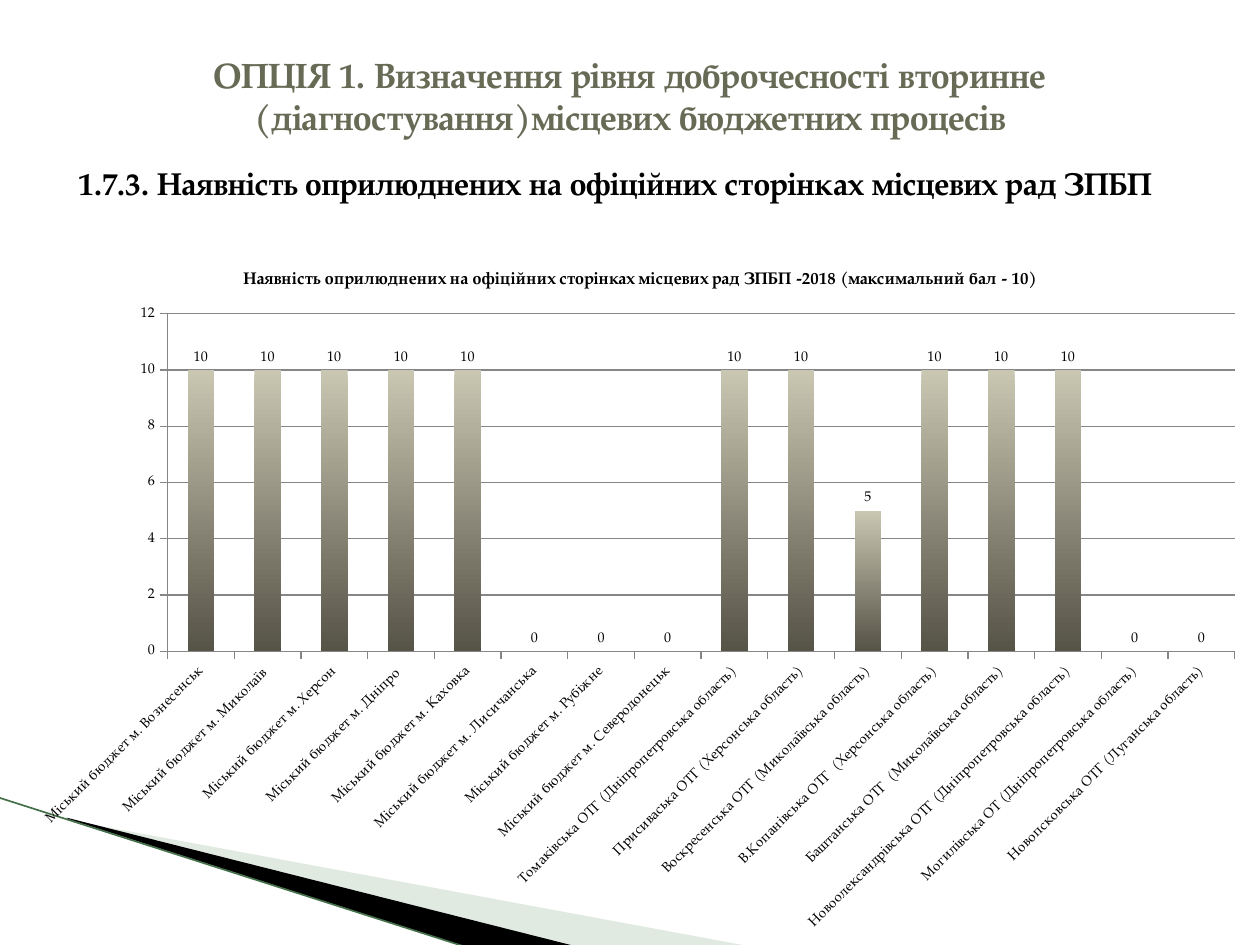
from lxml.etree import SubElement
from pptx import Presentation
from pptx.chart.data import CategoryChartData
from pptx.dml.color import RGBColor
from pptx.enum.chart import XL_CHART_TYPE, XL_LABEL_POSITION, XL_TICK_MARK
from pptx.enum.shapes import MSO_CONNECTOR
from pptx.enum.text import MSO_ANCHOR, PP_ALIGN
from pptx.oxml import parse_xml
from pptx.oxml.ns import nsdecls, qn
from pptx.util import Inches, Pt

FONT = "TeX Gyre Pagella"
BLACK = RGBColor(0, 0, 0)
OLIVE = RGBColor(0x67, 0x6A, 0x55)
PALE_GREEN = RGBColor(0xB3, 0xCB, 0xB5)
DARK_GREEN = RGBColor(0x44, 0x70, 0x4A)
GRID_GREY = RGBColor(0x86, 0x86, 0x86)
BAR_TOP = RGBColor(0xC9, 0xC6, 0xB2)
BAR_BOTTOM = RGBColor(0x56, 0x53, 0x47)

TEXTS = [
    ("ОПЦІЯ 1. Визначення рівня доброчесності вторинне (діагностування)місцевих бюджетних процесів",
     (0.5, 0.3, 9, 1.25), 20, OLIVE, 0.38),
    ("1.7.3. Наявність оприлюднених на офіційних сторінках місцевих рад ЗПБП",
     (0, 1.25, 9.77, 0.4), 18, BLACK, 0.05),
]
WEDGES = [
    ((0.78, 5.47, 4.16, 1.58),
     [(0.55, 6.51), (5.95, 7.51), (4.56, 7.51), (0.55, 6.5)], PALE_GREEN, 40),
    ((-0.06, 6.33, 4.16, 0.92),
     [(0.53, 6.49), (4.57, 7.51), (3.72, 7.52), (0.54, 6.5)], BLACK, 100),
]
EDGE = (-0.01, 6.33, 3.71, 7.52)

CHART_TITLE = "Наявність оприлюднених на офіційних сторінках місцевих рад ЗПБП -2018 (максимальний бал - 10)"
CHART_BOX = (0.16, 1.96, 9.84, 5.54)
PLOT_BOX = (1.17, 0.53, 8.47, 2.68)
SCORES = [
    ("Міський бюджет м. Вознесенськ", 10),
    ("Міський бюджет м. Миколаїв ", 10),
    ("Міський бюджет м. Херсон", 10),
    ("Міський бюджет м. Дніпро ", 10),
    ("Міський бюджет м. Каховка", 10),
    ("Міський бюджет м. Лисичанська", 0),
    ("Міський бюджет м. Рубіжне", 0),
    ("Міський бюджет м. Северодонецьк", 0),
    ("Томаківська ОТГ (Дніпропетровська область)", 10),
    (" Присиваська ОТГ (Херсонська область)", 10),
    (" Воскресенська ОТГ (Миколаївська область)", 5),
    ("В.Копанівська ОТГ  (Херсонська область)", 10),
    ("Баштанська ОТГ  (Миколаївська область)", 10),
    ("Новоолександрівська ОТГ (Дніпропетровська область)", 10),
    ("Могилівська ОТ (Дніпропетровська область)", 0),
    ("Новопсковська ОТГ (Луганська область)", 0),
]


def inches(values):
    return [Inches(value) for value in values]


def set_font(font, size, color, bold):
    for name, value in {"name": FONT, "size": Pt(size), "bold": bold}.items():
        setattr(font, name, value)
    font.color.rgb = color


def set_frame(shape, frame):
    left, top, width, height = inches(frame)
    shift_x, shift_y = shape.left - left, shape.top - top
    outline = next(shape._element.iter(qn("a:path")))
    outline.set("w", str(width))
    outline.set("h", str(height))
    for point in outline.iter(qn("a:pt")):
        point.set("x", str(int(point.get("x")) + shift_x))
        point.set("y", str(int(point.get("y")) + shift_y))
    shape.left, shape.top, shape.width, shape.height = left, top, width, height


def add_wedge(slide, frame, points, color, opacity):
    builder = slide.shapes.build_freeform(*inches(points[0]), scale=1.0)
    builder.add_line_segments([inches(point) for point in points[1:]], close=True)
    shape = builder.convert_to_shape()
    set_frame(shape, frame)
    shape.shadow.inherit = False
    shape.fill.solid()
    shape.fill.fore_color.rgb = color
    shape.line.fill.background()
    if opacity < 100:
        fill_color = shape.fill._xPr.find(qn("a:solidFill"))[0]
        SubElement(fill_color, qn("a:alpha")).set("val", str(opacity * 1000))


def add_edge(slide):
    edge = slide.shapes.add_connector(MSO_CONNECTOR.STRAIGHT, *inches(EDGE))
    edge.line.color.rgb = DARK_GREEN
    edge.line.width = Pt(0.95)
    SubElement(edge._element.spPr, qn("a:effectLst"))


def add_text(slide, text, box, size, color, bottom):
    frame = slide.shapes.add_textbox(*inches(box)).text_frame
    settings = {"word_wrap": True, "vertical_anchor": MSO_ANCHOR.MIDDLE,
                "margin_bottom": Inches(bottom)}
    for name, value in settings.items():
        setattr(frame, name, value)
    paragraph = frame.paragraphs[0]
    paragraph.alignment = PP_ALIGN.CENTER
    run = paragraph.add_run()
    run.text = text
    set_font(run.font, size, color, True)


def place_plot(chart):
    plot_area = chart._chartSpace.chart.plotArea
    for layout in plot_area.findall(qn("c:layout")):
        plot_area.remove(layout)
    lengths = zip("xywh", PLOT_BOX, CHART_BOX[2:] * 2)
    shares = "".join(f'<c:{side} val="{part / whole:.4f}"/>' for side, part, whole in lengths)
    plot_area.insert(0, parse_xml(
        f'<c:layout {nsdecls("c")}><c:manualLayout><c:layoutTarget val="inner"/>'
        f'<c:xMode val="edge"/><c:yMode val="edge"/>{shares}</c:manualLayout></c:layout>'))


def add_score_chart(slide):
    data = CategoryChartData()
    data.categories = [name for name, score in SCORES]
    data.add_series("Series 1", [score for name, score in SCORES])
    chart = slide.shapes.add_chart(
        XL_CHART_TYPE.COLUMN_CLUSTERED, *inches(CHART_BOX), data).chart
    set_font(chart.font, 8, BLACK, False)
    chart.has_legend = False
    chart.has_title = True
    title = chart.chart_title
    title.include_in_layout = False
    title.text_frame.text = CHART_TITLE
    set_font(title.text_frame.paragraphs[0].runs[0].font, 9.6, BLACK, True)
    place_plot(chart)

    for axis in (chart.category_axis, chart.value_axis):
        axis.major_tick_mark = XL_TICK_MARK.OUTSIDE
        axis.format.line.color.rgb = GRID_GREY
        set_font(axis.tick_labels.font, 8, BLACK, False)
    label_body = chart.category_axis._element.find(qn("c:txPr")).find(qn("a:bodyPr"))
    label_body.set("rot", "-2700000")
    label_body.set("vert", "horz")
    value_axis = chart.value_axis
    for name, value in {"minimum_scale": 0, "maximum_scale": 12, "major_unit": 2}.items():
        setattr(value_axis, name, value)
    value_axis.major_gridlines.format.line.color.rgb = GRID_GREY

    plot = chart.plots[0]
    plot.vary_by_categories = False
    plot.gap_width = 150
    plot.has_data_labels = True
    labels = plot.data_labels
    labels.show_value = True
    labels.position = XL_LABEL_POSITION.OUTSIDE_END
    set_font(labels.font, 8, BLACK, False)
    fill = plot.series[0].format.fill
    fill.gradient()
    fill.gradient_angle = 270
    for stop, color in zip(fill.gradient_stops, (BAR_TOP, BAR_BOTTOM)):
        stop.color.rgb = color


def main():
    presentation = Presentation()
    presentation.slide_width, presentation.slide_height = inches((10, 7.5))
    slide = presentation.slides.add_slide(presentation.slide_layouts[6])
    for wedge in WEDGES:
        add_wedge(slide, *wedge)
    add_edge(slide)
    for text in TEXTS:
        add_text(slide, *text)
    add_score_chart(slide)
    presentation.save("out.pptx")


if __name__ == "__main__":
    main()
